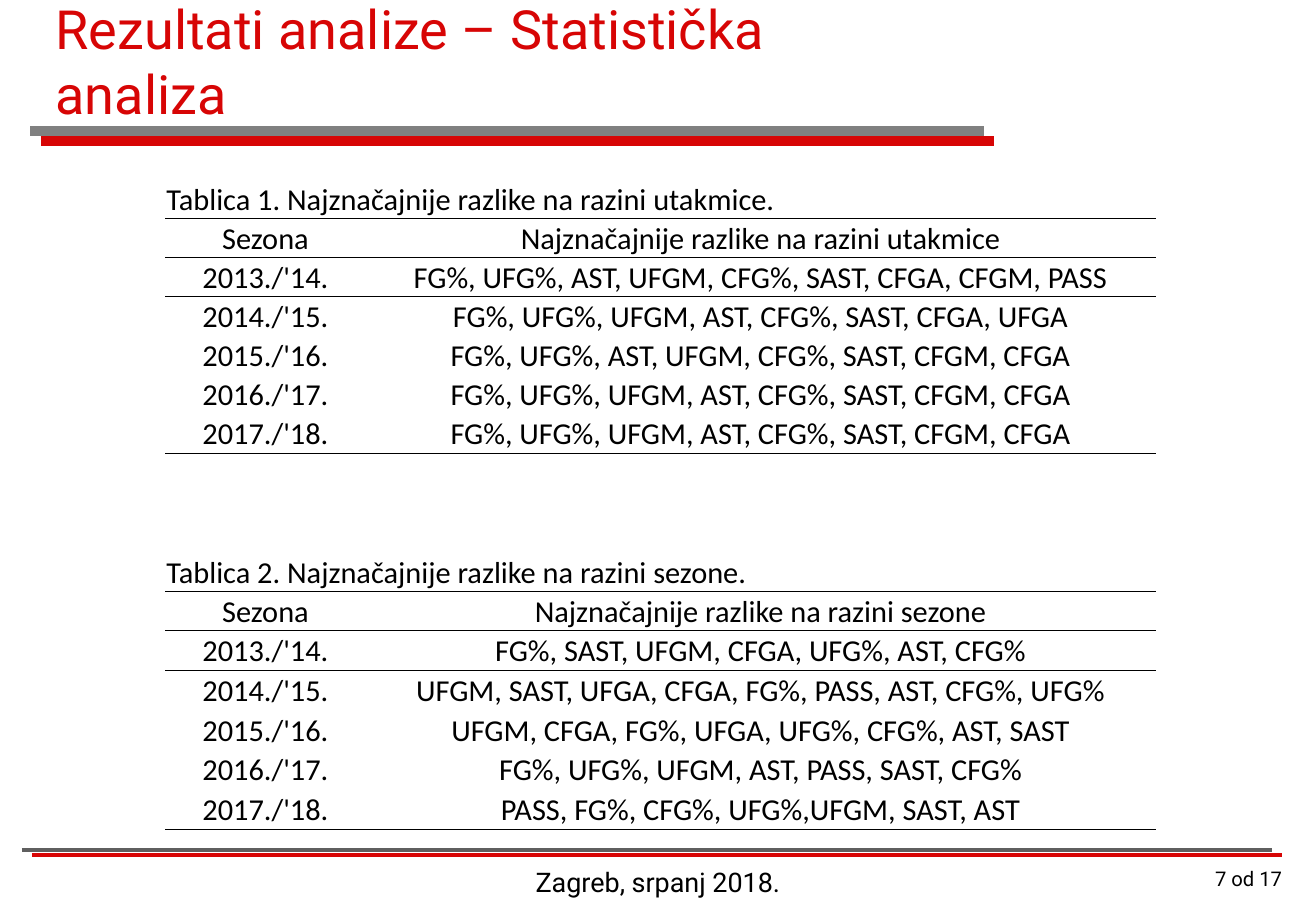
"""Build the slide with two tables of the most significant differences."""
from dataclasses import dataclass

from lxml import etree
from pptx import Presentation
from pptx.dml.color import RGBColor
from pptx.enum import shapes, text
from pptx.oxml import ns
from pptx.util import Inches, Pt

LEFT, MID, RIGHT = text.PP_ALIGN.LEFT, text.PP_ALIGN.CENTER, text.PP_ALIGN.RIGHT
TOP, CENTER, BASE = (
    text.MSO_ANCHOR.TOP, text.MSO_ANCHOR.MIDDLE, text.MSO_ANCHOR.BOTTOM)


@dataclass(frozen=True)
class Theme:
    red: str = "D70505"
    gray: str = "808080"
    dark: str = "5F5F5F"
    black: str = "000000"
    sans: str = "Roboto"
    body: str = "Calibri"
    title: int = 32
    cell: int = 18
    foot: int = 16
    page: int = 12
    edge: float = 0.5


@dataclass(frozen=True)
class Rule:
    left: float
    right: float
    y: float
    color: str
    width: float
    dist: float
    angle: int


@dataclass(frozen=True)
class Label:
    words: str
    left: float
    top: float
    width: float
    height: float
    size: int
    color: str
    align: text.PP_ALIGN
    anchor: text.MSO_ANCHOR = TOP


@dataclass(frozen=True)
class Grid:
    number: int
    level: str
    top: float
    height: float
    stats: tuple[str, ...]


THEME = Theme()
RULES = (
    Rule(0.25, 8.1, 1.08, THEME.gray, 6, 8.5, 45),
    Rule(0.18, 10.47, 7, THEME.dark, 2.25, 6.7, 27),
)
LABELS = (
    Label("Rezultati analize – Statistička analiza", 0.36, 0, 7.14, 1,
          THEME.title, THEME.red, LEFT, CENTER),
    Label("Zagreb, srpanj 2018.", 4, 7.08, 2.83, 0.42,
          THEME.foot, THEME.black, MID),
    Label("7 od 17", 8.39, 7.08, 2.26, 0.42, THEME.page, THEME.black, RIGHT),
)
GRIDS = (
    Grid(1, "utakmice", 1.48, 2.25, (
        "FG%, UFG%, AST, UFGM, CFG%, SAST, CFGA, CFGM, PASS",
        "FG%, UFG%, UFGM, AST, CFG%, SAST, CFGA, UFGA",
        "FG%, UFG%, AST, UFGM, CFG%, SAST, CFGM, CFGA",
        "FG%, UFG%, UFGM, AST, CFG%, SAST, CFGM, CFGA",
        "FG%, UFG%, UFGM, AST, CFG%, SAST, CFGM, CFGA",
    )),
    Grid(2, "sezone", 4.54, 2.29, (
        "FG%, SAST, UFGM, CFGA, UFG%, AST, CFG%",
        "UFGM, SAST, UFGA, CFGA, FG%, PASS, AST, CFG%, UFG%",
        "UFGM, CFGA, FG%, UFGA, UFG%, CFG%, AST, SAST",
        "FG%, UFG%, UFGM, AST, PASS, SAST, CFG%",
        "PASS, FG%, CFG%, UFG%,UFGM, SAST, AST",
    )),
)
COLS = (1.65, 6.5)
PLAIN = "{2D5ABB26-0587-4C30-8999-92F81FD0307C}"


def node(base, tag: str, **attrs: str):
    return etree.SubElement(base, ns.qn(tag), attrs)


def write(frame, words: str, font: str, size: int, color: str, align) -> None:
    line = frame.paragraphs[0]
    line.alignment = align
    run = line.add_run()
    run.text = words
    run.font.name = font
    run.font.size = Pt(size)
    run.font.color.rgb = RGBColor.from_string(color)


def draw_rule(slide, rule: Rule) -> None:
    line = slide.shapes.add_connector(
        shapes.MSO_CONNECTOR.STRAIGHT, Inches(rule.left), Inches(rule.y),
        Inches(rule.right), Inches(rule.y))
    line.line.color.rgb = RGBColor.from_string(rule.color)
    line.line.width = Pt(rule.width)
    effect = node(line._element.spPr, "a:effectLst")
    shade = node(effect, "a:outerShdw", dist=str(int(Pt(rule.dist))),
                 dir=str(rule.angle * 60000), algn="ctr", rotWithShape="0")
    node(shade, "a:srgbClr", val=THEME.red)


def draw_label(slide, label: Label) -> None:
    box = slide.shapes.add_textbox(
        Inches(label.left), Inches(label.top),
        Inches(label.width), Inches(label.height))
    frame = box.text_frame
    frame.word_wrap = True
    frame.vertical_anchor = label.anchor
    write(frame, label.words, THEME.sans, label.size, label.color, label.align)


def add_edge(cell, tag: str) -> None:
    edge = node(cell._tc.get_or_add_tcPr(), tag, w=str(int(Pt(THEME.edge))))
    node(node(edge, "a:solidFill"), "a:srgbClr", val=THEME.black)


def style_cell(cell, row: int, last: int) -> None:
    cell.margin_left = cell.margin_right = cell.margin_top = Inches(0.01)
    cell.margin_bottom = 0
    cell.vertical_anchor = CENTER if row else BASE
    if row in (1, 2):
        add_edge(cell, "a:lnT")
    if row in (0, 1, last):
        add_edge(cell, "a:lnB")
    cell.fill.background()


def draw_grid(slide, grid: Grid) -> None:
    head = f"Najznačajnije razlike na razini {grid.level}"
    rows = [(f"Tablica {grid.number}. {head}.", ""), ("Sezona", head)]
    rows += [(f"{year}./'{year - 1999}.", stat)
             for year, stat in enumerate(grid.stats, 2013)]
    table = slide.shapes.add_table(
        len(rows), len(COLS), Inches(1.36), Inches(grid.top),
        Inches(sum(COLS)), Inches(grid.height)).table
    table.first_row = table.horz_banding = False
    table._tbl.tblPr.find(ns.qn("a:tableStyleId")).text = PLAIN
    for col, width in zip(table.columns, COLS):
        col.width = Inches(width)
    table.cell(0, 0).merge(table.cell(0, 1))
    for i, row in enumerate(rows):
        for j, words in enumerate(row):
            cell = table.cell(i, j)
            style_cell(cell, i, len(rows) - 1)
            if words:
                write(cell.text_frame, words, THEME.body, THEME.cell,
                      THEME.black, MID if i else LEFT)


def main() -> None:
    deck = Presentation()
    deck.slide_width, deck.slide_height = Inches(10.83), Inches(7.5)
    slide = deck.slides.add_slide(deck.slide_layouts[6])
    for rule in RULES:
        draw_rule(slide, rule)
    for label in LABELS:
        draw_label(slide, label)
    for grid in GRIDS:
        draw_grid(slide, grid)
    deck.save("out.pptx")


if __name__ == "__main__":
    main()
